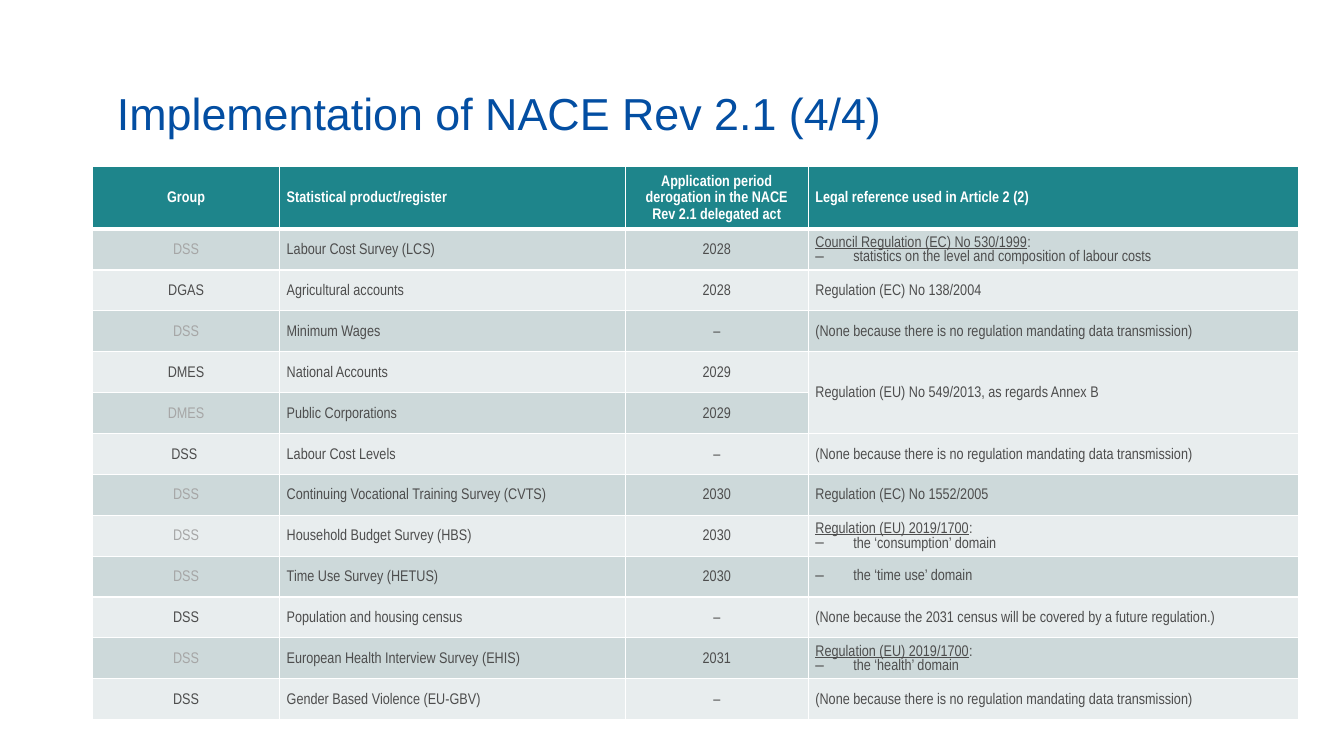
from dataclasses import dataclass

from lxml.etree import SubElement as Sub
from pptx import Presentation
from pptx.dml.color import RGBColor as RGB
from pptx.enum.text import MSO_ANCHOR as Anchor, PP_ALIGN as Align
from pptx.oxml.ns import qn
from pptx.util import Pt


@dataclass(frozen=True)
class Theme:
    title: str = "034EA2"
    head: str = "1E858B"
    dark: str = "CDD9DA"
    light: str = "E8EDEE"
    white: str = "FFFFFF"
    ink: str = "4D4D4D"
    muted: str = "A6A6A6"
    title_font: str = "Arial"
    cell_font: str = "Arial Narrow"
    title_size: int = 32
    cell_size: int = 11


THEME = Theme()
NONE = "(None because there is no regulation mandating data transmission)"
HEADS = (
    "Group",
    "Statistical product/register",
    "Application period derogation in the NACE Rev 2.1 delegated act",
    "Legal reference used in Article 2 (2)",
)
# Muted group, group, product, period, legal lines ("– " starts a bullet)
ROWS = (
    (True, "DSS", "Labour Cost Survey (LCS)", "2028",
     "Council Regulation (EC) No 530/1999:",
     "– statistics on the level and composition of labour costs"),
    (False, "DGAS", "Agricultural accounts", "2028", "Regulation (EC) No 138/2004"),
    (True, "DSS", "Minimum Wages", "–", NONE),
    (False, "DMES", "National Accounts", "2029",
     "Regulation (EU) No 549/2013, as regards Annex B"),
    (True, "DMES", "Public Corporations", "2029"),
    (False, "DSS ", "Labour Cost Levels", "–", NONE),
    (True, "DSS", "Continuing Vocational Training Survey (CVTS)", "2030",
     "Regulation (EC) No 1552/2005"),
    (True, "DSS", "Household Budget Survey (HBS)", "2030",
     "Regulation (EU) 2019/1700:", "– the ‘consumption’ domain"),
    (True, "DSS", "Time Use Survey (HETUS)", "2030", "– the ‘time use’ domain"),
    (False, "DSS", "Population and housing census", "–",
     "(None because the 2031 census will be covered by a future regulation.)"),
    (True, "DSS", "European Health Interview Survey (EHIS)", "2031",
     "Regulation (EU) 2019/1700:", "– the ‘health’ domain"),
    (False, "DSS", "Gender Based Violence (EU-GBV)", "–", NONE),
)
WIDTHS = (133.3, 247.1, 130.6, 350)
HEAD_H, ROW_H = 44.7, 29.2


def write(para, text, font=THEME.cell_font, size=THEME.cell_size, color=THEME.ink,
          bold=False, under=False, align=Align.LEFT, space=1.15):
    para.alignment = align
    para.line_spacing = space
    run = para.add_run()
    run.text = text
    run.font.name = font
    run.font.size = Pt(size)
    run.font.color.rgb = RGB.from_string(color)
    run.font.bold = bold
    run.font.underline = under


def bullet(para):
    props = para._p.get_or_add_pPr()
    props.set("marL", str(Pt(27)))
    props.set("indent", str(Pt(-27)))
    Sub(props, qn("a:buChar"), char="–")


def edge(cell, side, width):
    line = Sub(cell._tc.get_or_add_tcPr(), qn("a:ln" + side), w=str(Pt(width)))
    Sub(Sub(line, qn("a:solidFill")), qn("a:srgbClr"), val=THEME.white)


def style(cell, fill, top=1, base=1):
    cell.margin_left = cell.margin_right = Pt(5.2)
    cell.margin_top = cell.margin_bottom = 0
    cell.vertical_anchor = Anchor.MIDDLE
    for side, width in (("L", 1), ("R", 1), ("T", top), ("B", base)):
        edge(cell, side, width)
    cell.fill.solid()
    cell.fill.fore_color.rgb = RGB.from_string(fill)


def write_legal(cell, lines):
    """Write references ending in a colon underlined, and dashed lines as bullets."""
    frame = cell.text_frame
    for i, line in enumerate(lines):
        para = frame.add_paragraph() if i else frame.paragraphs[0]
        if line.startswith("– "):
            bullet(para)
            write(para, line[2:], space=1.0)
        elif line.endswith(":"):
            write(para, line[:-1], under=True)
            write(para, ":")
        else:
            write(para, line)


def add_title(slide, text):
    title = slide.shapes.title
    title.left, title.top, title.width, title.height = Pt(76.3), Pt(38.2), Pt(828), Pt(62)
    frame = title.text_frame
    frame.word_wrap = True
    frame.vertical_anchor = Anchor.BOTTOM
    frame.margin_left = frame.margin_right = Pt(7.2)
    frame.margin_top, frame.margin_bottom = Pt(3.6), 0
    write(frame.paragraphs[0], text, font=THEME.title_font, size=THEME.title_size,
          color=THEME.title, space=0.9)


def add_grid(slide):
    height = HEAD_H + ROW_H * len(ROWS)
    table = slide.shapes.add_table(len(ROWS) + 1, len(HEADS), Pt(66.3), Pt(119),
                                   Pt(sum(WIDTHS)), Pt(height)).table
    for col, width in zip(table.columns, WIDTHS):
        col.width = Pt(width)
    for i, row in enumerate(table.rows):
        row.height = Pt(ROW_H if i else HEAD_H)
    aligns = (Align.CENTER, Align.LEFT, Align.CENTER, Align.LEFT)
    for c, head in enumerate(HEADS):
        cell = table.cell(0, c)
        style(cell, THEME.head, base=3)
        write(cell.text_frame.paragraphs[0], head, color=THEME.white, bold=True,
              align=aligns[c])
    for r, (muted, group, product, period, *legal) in enumerate(ROWS, 1):
        for c in range(len(HEADS)):
            style(table.cell(r, c), THEME.dark if r % 2 else THEME.light,
                  top=3 if r == 1 else 1)
        for c, text in enumerate((group, product, period)):
            color = THEME.muted if muted and c == 0 else THEME.ink
            write(table.cell(r, c).text_frame.paragraphs[0], text, color=color,
                  align=aligns[c])
        if legal:
            write_legal(table.cell(r, 3), legal)
        else:
            table.cell(r - 1, 3).merge(table.cell(r, 3))


def main():
    deck = Presentation()
    deck.slide_width, deck.slide_height = Pt(960), Pt(540)
    slide = deck.slides.add_slide(deck.slide_layouts[5])
    add_grid(slide)
    add_title(slide, "Implementation of NACE Rev 2.1 (4/4)")
    deck.save("out.pptx")


if __name__ == "__main__":
    main()
